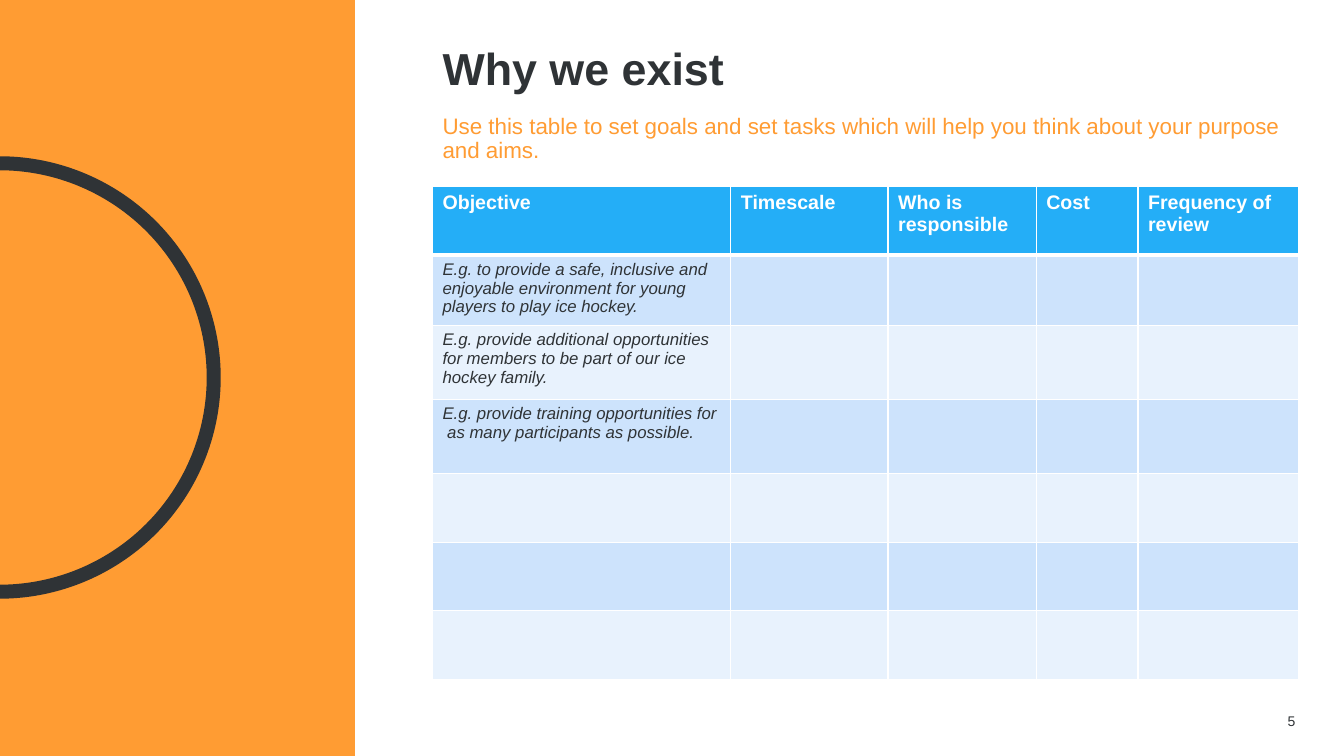
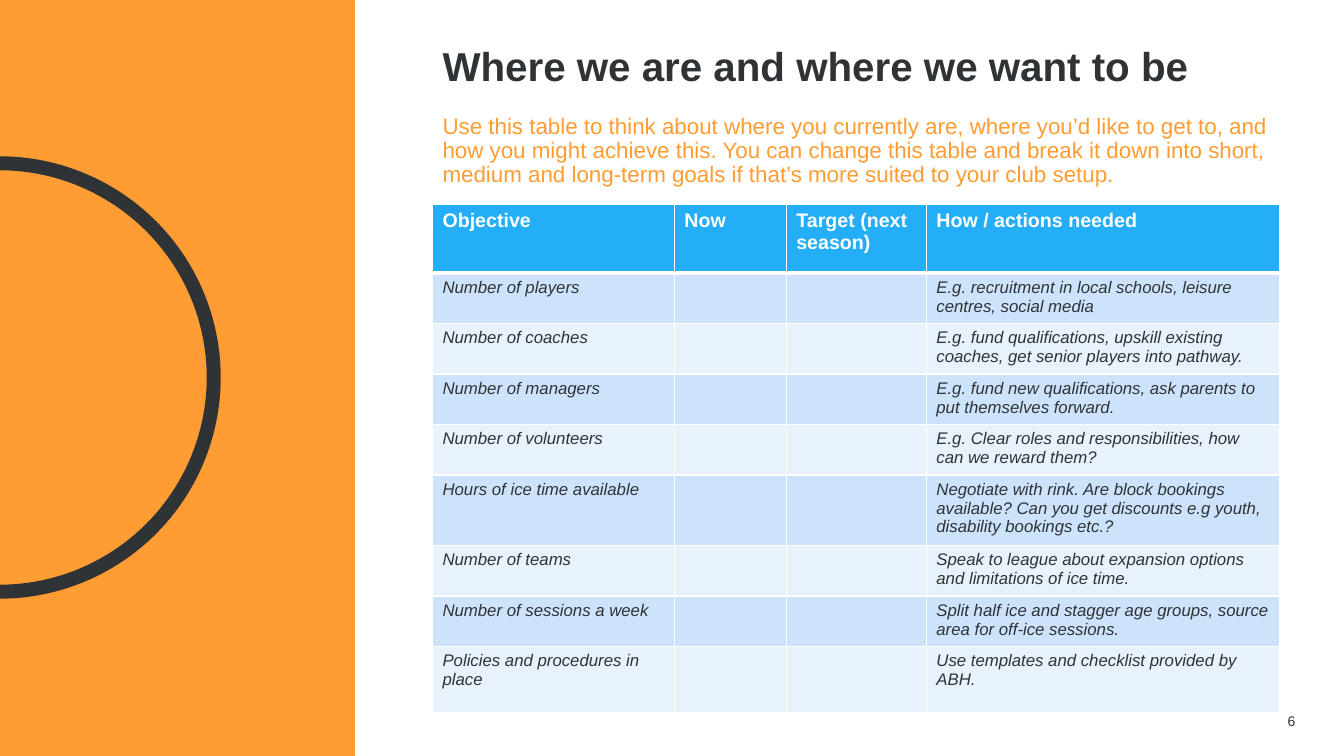
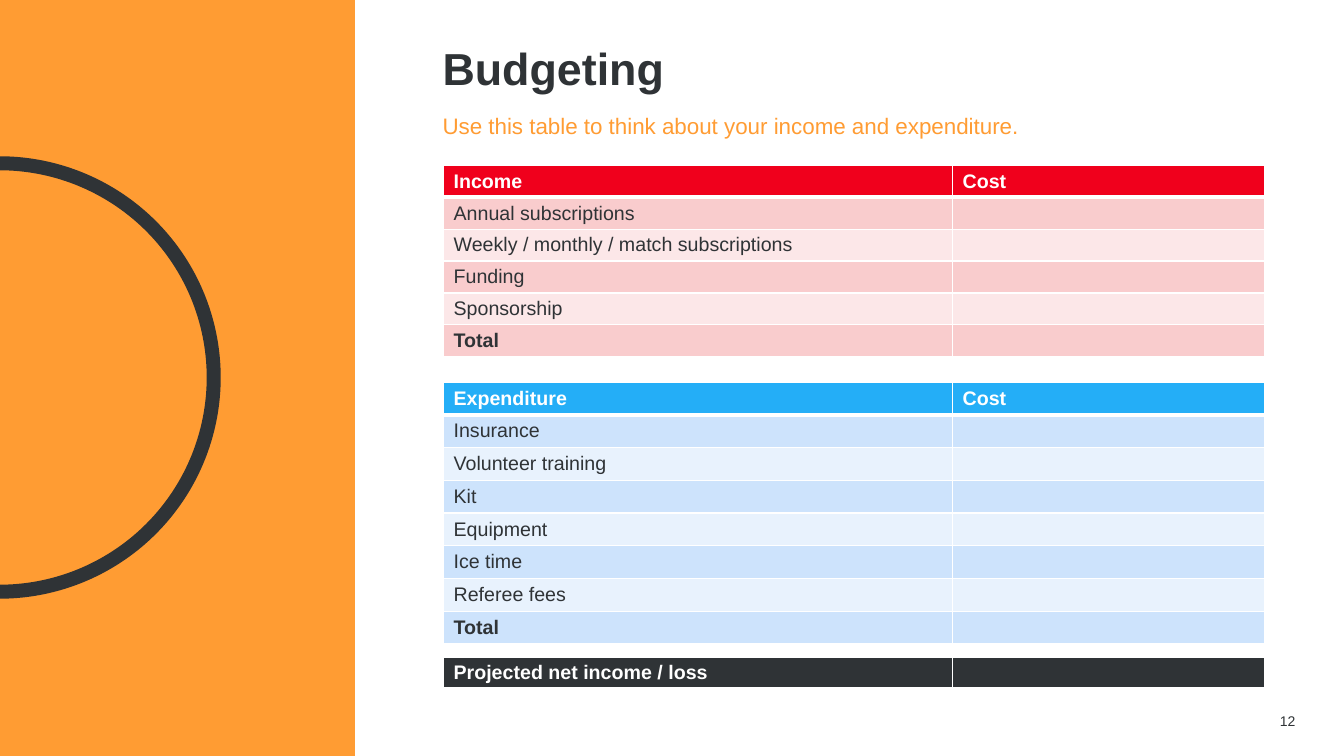
"""Build three club planning slides with goal, target and budget tables."""
from lxml import etree
from pptx import Presentation, util as u
from pptx.dml.color import RGBColor
from pptx.enum import shapes, text
from pptx.oxml import ns

ORANGE, DARK, WHITE = "FF9C33", "2F3336", "FFFFFF"
BLUE_TABLE = ("24AEF7", "CDE3FC", "E8F2FD")
RED_TABLE = ("F0001C", "F9CCCD", "FCE7E8")
DARK_TABLE = (DARK, DARK, DARK)
WIDTH, HEIGHT = 133.33, 75
LEFT, BUDGET_LEFT = 42.9, 44
BUDGET_COLUMNS = (50.5, 31)


def grid(*units):
    """Turn grid units, each a tenth of an inch, into lengths."""
    return [u.Inches(unit / 10) for unit in units]


def color(value):
    """Turn a hex string into a colour."""
    return RGBColor.from_string(value)


class Deck:
    """Holds the presentation, its style and the current slide."""

    font = "Arial"

    def __init__(self):
        """Start an empty widescreen presentation."""
        self.presentation = Presentation()
        self.presentation.slide_width, self.presentation.slide_height = grid(WIDTH, HEIGHT)
        self.slide = None

    def add_run(self, paragraph, words, size, ink, bold=False, italic=False):
        """Add one formatted run."""
        run = paragraph.add_run()
        run.text = words
        run.font.name, run.font.size = self.font, u.Pt(size)
        run.font.bold, run.font.italic = bold, italic
        run.font.color.rgb = color(ink)

    def add_slide(self, title, intro, number, title_width=39.1, title_size=32):
        """Add a slide with its side panel, heading, introduction and number."""
        self.slide = self.presentation.slides.add_slide(self.presentation.slide_layouts[1])
        self.add_panel()
        heading, body = self.slide.placeholders
        self.fill_placeholder(heading, (LEFT, 4.1, title_width, 6.8), title, title_size, DARK, True)
        self.fill_placeholder(body, (LEFT, 10.9, 86.1, 11), intro, 16, ORANGE)
        self.add_number(number)

    def add_panel(self):
        """Draw the orange band and the ring centred on the left edge."""
        kinds = shapes.MSO_SHAPE
        band = self.slide.shapes.add_shape(kinds.RECTANGLE, *grid(0, 0, 35.2, HEIGHT))
        band.fill.solid()
        band.fill.fore_color.rgb = color(ORANGE)
        band.line.fill.background()
        ring = self.slide.shapes.add_shape(kinds.OVAL, *grid(-21.3, 16.2, 42.5, 42.5))
        ring.fill.background()
        ring.line.color.rgb = color(DARK)
        ring.line.width = u.Pt(10)
        for shape in (band, ring):
            shape.shadow.inherit = False

    def fill_placeholder(self, shape, place, words, size, ink, bold=False):
        """Place a placeholder and write one plain left-aligned paragraph."""
        shape.left, shape.top, shape.width, shape.height = grid(*place)
        frame = shape.text_frame
        frame.word_wrap, frame.auto_size = True, text.MSO_AUTO_SIZE.NONE
        frame.vertical_anchor = text.MSO_ANCHOR.TOP
        paragraph = frame.paragraphs[0]
        paragraph.alignment = text.PP_ALIGN.LEFT
        paragraph.line_spacing, paragraph.space_before = 0.9, u.Pt(0)
        properties = paragraph._p.get_or_add_pPr()
        properties.set("marL", "0")
        properties.set("indent", "0")
        etree.SubElement(properties, ns.qn("a:buNone"))
        self.add_run(paragraph, words, size, ink, bold)

    def add_number(self, number):
        """Write the slide number at the bottom right."""
        frame = self.slide.shapes.add_textbox(*grid(99.5, 69.5, 30, 4)).text_frame
        frame.word_wrap, frame.vertical_anchor = True, text.MSO_ANCHOR.MIDDLE
        paragraph = frame.paragraphs[0]
        paragraph.alignment = text.PP_ALIGN.RIGHT
        self.add_run(paragraph, number, 10, DARK)

    def add_table(self, place, columns, heights, rows, palette, size=14, italic=False, compact=False):
        """Add a banded table whose first row is the header."""
        frame = self.slide.shapes.add_table(
            len(rows), len(columns), *grid(*place, sum(columns), sum(heights)))
        table = frame.table
        table.horz_banding = False
        for column, width in zip(table.columns, grid(*columns)):
            column.width = width
        for row, height in zip(table.rows, grid(*heights)):
            row.height = height
        header, *bands = palette
        for index, row in enumerate(rows):
            is_header = index == 0
            for position, words in enumerate(row):
                cell = table.cell(index, position)
                self.add_borders(cell, 3 if index == 1 else 1, 3 if is_header else 1)
                cell.fill.solid()
                cell.fill.fore_color.rgb = color(header if is_header else bands[(index - 1) % 2])
                if compact:
                    cell.margin_top = cell.margin_bottom = u.Inches(0.03)
                    cell.vertical_anchor = text.MSO_ANCHOR.MIDDLE
                paragraph = cell.text_frame.paragraphs[0]
                if not words:
                    paragraph._p.get_or_add_endParaRPr().set("sz", str(size * 100))
                elif is_header:
                    self.add_run(paragraph, words, 14, WHITE, True)
                else:
                    self.add_run(paragraph, words, size, DARK, words == "Total", italic)

    def add_borders(self, cell, top, bottom):
        """Draw white borders around a cell."""
        properties = cell._tc.get_or_add_tcPr()
        for side, width in zip("LRTB", (1, 1, top, bottom)):
            line = etree.SubElement(properties, ns.qn(f"a:ln{side}"), w=str(u.Pt(width)))
            fill = etree.SubElement(line, ns.qn("a:solidFill"))
            etree.SubElement(fill, ns.qn("a:srgbClr"), val=WHITE)

    def add_budget(self, top, height, labels, palette, cost="Cost"):
        """Add a two-column budget table with equal rows."""
        rows = [(label, "" if index else cost) for index, label in enumerate(labels)]
        self.add_table((BUDGET_LEFT, top), BUDGET_COLUMNS, [height / len(rows)] * len(rows),
                       rows, palette, compact=True)


def main():
    """Build and save the slides."""
    deck = Deck()

    deck.add_slide(
        "Why we exist",
        "Use this table to set goals and set tasks which will help you think about your purpose and aims.",
        "5")
    goals = (
        "E.g. to provide a safe, inclusive and enjoyable environment for young players to play ice hockey.",
        "E.g. provide additional opportunities for members to be part of our ice hockey family.",
        "E.g. provide training opportunities for  as many participants as possible.",
        "", "", "")
    header = ("Objective", "Timescale", "Who is responsible", "Cost", "Frequency of review")
    deck.add_table(
        (LEFT, 18.5), (29.6, 15.6, 14.7, 10.1, 15.9), (6.8, 6.7, 7.3, 7.4, 6.8, 6.8, 6.8),
        [header] + [(goal, "", "", "", "") for goal in goals], BLUE_TABLE, 12, True)

    deck.add_slide(
        "Where we are and where we want to be",
        "Use this table to think about where you currently are, where you’d like to get to, and "
        "how you might achieve this. You can change this table and break it down into short, "
        "medium and long-term goals if that’s more suited to your club setup.",
        "6", 78, 28.8)
    targets = (
        ("Number of players", "E.g. recruitment in local schools, leisure centres, social media"),
        ("Number of coaches",
         "E.g. fund qualifications, upskill existing coaches, get senior players into pathway."),
        ("Number of managers", "E.g. fund new qualifications, ask parents to put themselves forward."),
        ("Number of volunteers", "E.g. Clear roles and responsibilities, how can we reward them?"),
        ("Hours of ice time available",
         "Negotiate with rink. Are block bookings available? Can you get discounts e.g youth, "
         "disability bookings etc.?"),
        ("Number of teams", "Speak to league about expansion options and limitations of ice time."),
        ("Number of sessions a week",
         "Split half ice and stagger age groups, source area for off-ice sessions."),
        ("Policies and procedures in place", "Use templates and checklist provided by ABH."))
    header = ("Objective", "Now", "Target (next season)", "How / actions needed")
    deck.add_table(
        (LEFT, 20.3), (24, 11.1, 13.9, 35), (6.8, *[4.7] * 4, 6.6, 4.7, 4.7, 6.6),
        [header] + [(objective, "", "", action) for objective, action in targets],
        BLUE_TABLE, 12, True)

    deck.add_slide("Budgeting", "Use this table to think about your income and expenditure.", "12")
    deck.add_budget(
        16.4, 19,
        ("Income", "Annual subscriptions", "Weekly / monthly / match subscriptions",
         "Funding", "Sponsorship", "Total"),
        RED_TABLE)
    deck.add_budget(
        37.9, 26,
        ("Expenditure", "Insurance", "Volunteer training", "Kit", "Equipment",
         "Ice time", "Referee fees", "Total"),
        BLUE_TABLE)
    deck.add_budget(65.2, 3.1, ("Projected net income / loss",), DARK_TABLE, "")

    deck.presentation.save("out.pptx")


if __name__ == "__main__":
    main()
